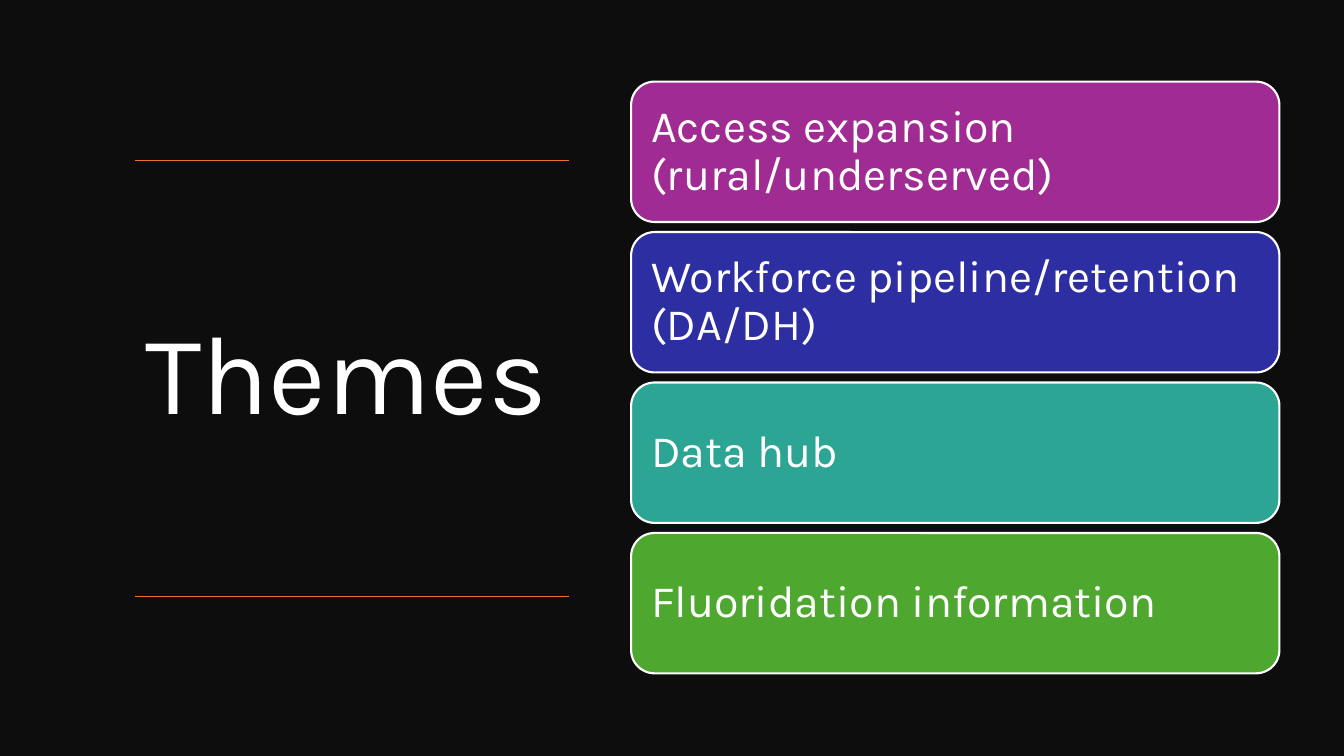
"""Builds the Themes slide: a ruled title beside a stack of coloured cards."""
from lxml.etree import SubElement
from pptx import Presentation
from pptx.dml.color import RGBColor
from pptx.enum.shapes import MSO_CONNECTOR, MSO_SHAPE
from pptx.enum.text import MSO_ANCHOR, MSO_AUTO_SIZE, PP_ALIGN
from pptx.oxml.ns import qn
from pptx.util import Inches, Pt

TITLE = "Themes"
THEMES = [
    ("Access expansion (rural/underserved)", "A02B93"),
    ("Workforce pipeline/retention (DA/DH)", "2C2EA2"),
    ("Data hub", "2DA594"),
    ("Fluoridation information", "4EA72E"),
]
FONT = "Karla"
BACKGROUND, WHITE, RULE = "0D0D0D", "FFFFFF", "E97132"
SLIDE_SIZE = (13.33, 7.5)
TITLE_BOX = (1.34, 1.59, 4.3, 4.33)
STACK = (6.26, 0.81, 6.43, 5.87)
CARD_GAP = 0.1
CARD_INSET = 0.13


def rgb(value):
    return RGBColor.from_string(value)


def write(frame, text, size, inset=None):
    frame.word_wrap = True
    frame.auto_size = MSO_AUTO_SIZE.NONE
    frame.vertical_anchor = MSO_ANCHOR.MIDDLE
    if inset is not None:
        frame.margin_left = frame.margin_right = Inches(inset)
        frame.margin_top = frame.margin_bottom = Inches(inset)
    paragraph = frame.paragraphs[0]
    paragraph.alignment = PP_ALIGN.LEFT
    paragraph.line_spacing = 0.9
    run = paragraph.add_run()
    run.text = text
    run.font.name = FONT
    run.font.size = Pt(size)
    run.font.color.rgb = rgb(WHITE)


def add_title(slide):
    left, top, width, height = map(Inches, TITLE_BOX)
    title = slide.shapes.title
    title.left, title.top, title.width, title.height = left, top, width, height
    write(title.text_frame, TITLE, 80)
    for y in (top, top + height):
        rule = slide.shapes.add_connector(
            MSO_CONNECTOR.STRAIGHT, left + width, y, left, y)
        rule.line.color.rgb = rgb(RULE)
        rule.line.width = Pt(1)
        SubElement(rule._element.spPr, qn("a:effectLst"))


def add_cards(slide):
    left, top, width, height = STACK
    card_height = (height - CARD_GAP * (len(THEMES) - 1)) / len(THEMES)
    for row, (theme, color) in enumerate(THEMES):
        card_top = top + row * (card_height + CARD_GAP)
        card = slide.shapes.add_shape(
            MSO_SHAPE.ROUNDED_RECTANGLE,
            *map(Inches, (left, card_top, width, card_height)))
        card.shadow.inherit = False
        card.fill.solid()
        card.fill.fore_color.rgb = rgb(color)
        card.line.color.rgb = rgb(WHITE)
        card.line.width = Pt(1.5)
        write(card.text_frame, theme, 32, CARD_INSET)


def main():
    deck = Presentation()
    deck.slide_width, deck.slide_height = map(Inches, SLIDE_SIZE)
    slide = deck.slides.add_slide(deck.slide_layouts[5])
    slide.background.fill.solid()
    slide.background.fill.fore_color.rgb = rgb(BACKGROUND)
    add_title(slide)
    add_cards(slide)
    deck.save("out.pptx")


if __name__ == "__main__":
    main()
